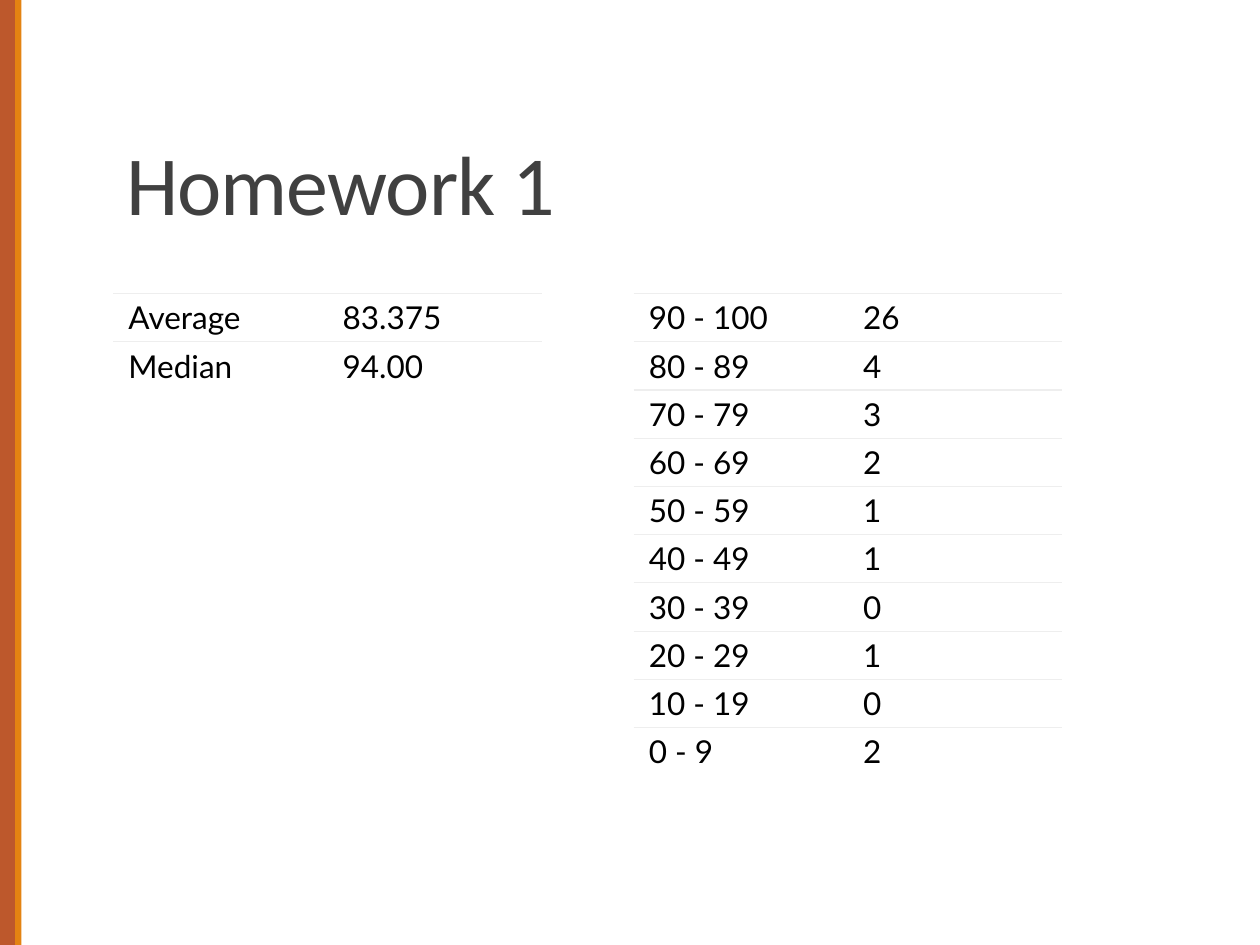
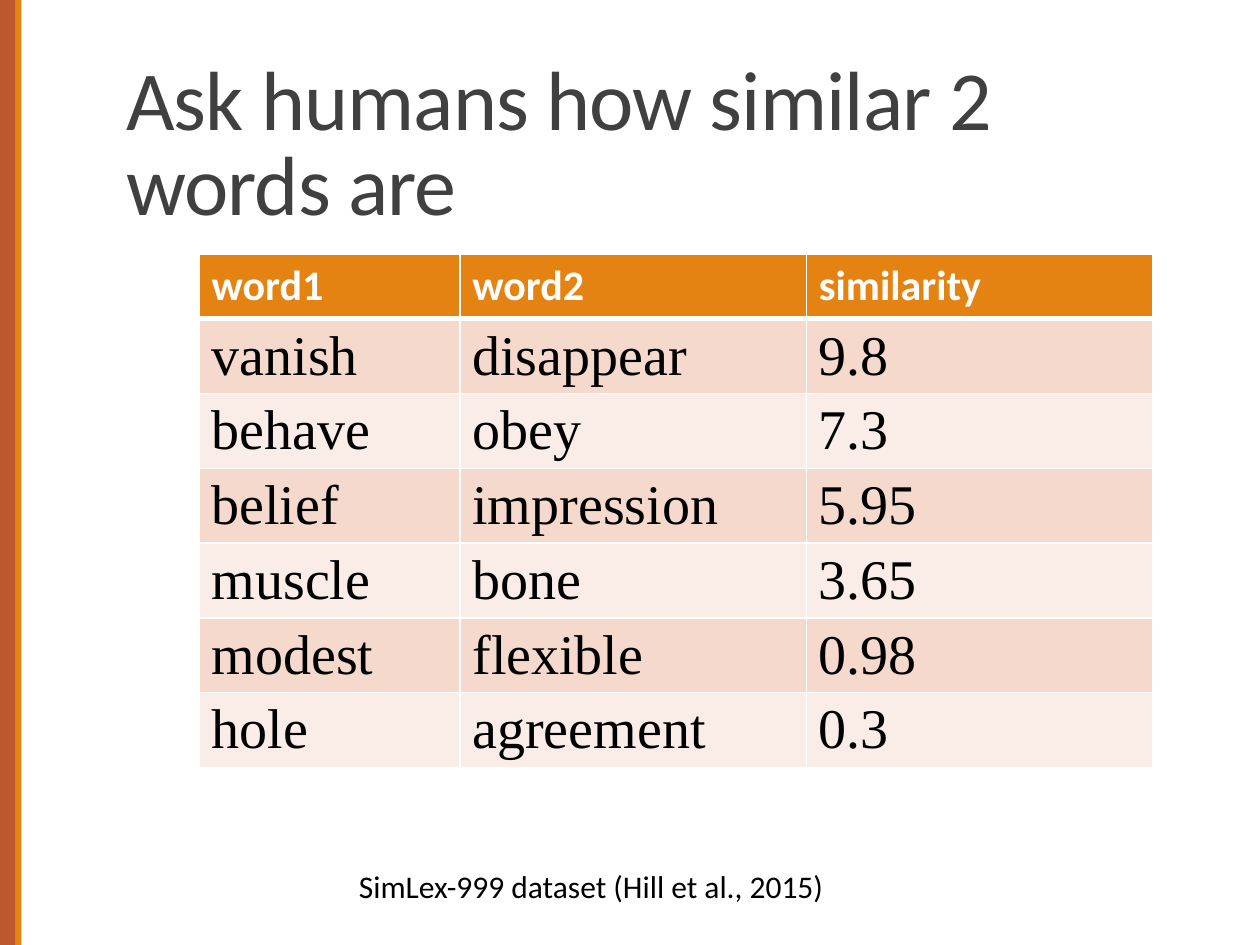
import dataclasses

import lxml.etree
import pptx
import pptx.dml.color
import pptx.enum.shapes
import pptx.enum.text
import pptx.oxml.ns
import pptx.util

GRID_COLUMNS, GRID_ROWS = 100, 75
SLIDE_WIDTH, SLIDE_HEIGHT = pptx.util.Inches(10), pptx.util.Inches(7.5)
NO_STYLE_NO_GRID = "{2D5ABB26-0587-4C30-8999-92F81FD0307C}"


@dataclasses.dataclass(frozen=True)
class Theme:
    rust: str = "BD582C"
    orange: str = "E48312"
    title: str = "404040"
    black: str = "000000"
    white: str = "FFFFFF"
    rule: str = "EEEEEE"
    dark_band: str = "F5D9CC"
    light_band: str = "FAEDE7"
    font: str = "Calibri"
    score_font: str = "Lato"
    word_font: str = "Times New Roman"
    title_size: int = 48
    word_size: int = 32
    header_size: int = 24
    small_size: int = 18


@dataclasses.dataclass(frozen=True)
class Box:
    """A rectangle in columns and rows of the slide grid."""
    left: float
    top: float
    width: float
    height: float

    def place(self):
        return x(self.left), y(self.top), x(self.width), y(self.height)


THEME = Theme()
TITLE_BOX = Box(9, 3.1, 82.5, 15.9)
BANDS = [(Box(0, 0, 1.2, GRID_ROWS), THEME.rust),
         (Box(1.2, 0, 0.5, GRID_ROWS), THEME.orange)]


def x(columns):
    return round(SLIDE_WIDTH * columns / GRID_COLUMNS)


def y(rows):
    return round(SLIDE_HEIGHT * rows / GRID_ROWS)


def color(value):
    return pptx.dml.color.RGBColor.from_string(value)


def add_run(paragraph, text, size, font, ink, bold=False):
    run = paragraph.add_run()
    run.text = text
    run.font.size = pptx.util.Pt(size)
    run.font.name = font
    run.font.bold = bold
    run.font.color.rgb = color(ink)
    return run


def add_bands(slide):
    for box, fill in BANDS:
        band = slide.shapes.add_shape(
            pptx.enum.shapes.MSO_SHAPE.RECTANGLE, *box.place())
        band.shadow.inherit = False
        band.fill.solid()
        band.fill.fore_color.rgb = color(fill)
        band.line.fill.background()


def fill_title(slide, text):
    title = slide.shapes.title
    title.left, title.top, title.width, title.height = TITLE_BOX.place()
    frame = title.text_frame
    frame.word_wrap = True
    frame.auto_size = pptx.enum.text.MSO_AUTO_SIZE.NONE
    frame.vertical_anchor = pptx.enum.text.MSO_ANCHOR.BOTTOM
    paragraph = frame.paragraphs[0]
    paragraph.alignment = pptx.enum.text.PP_ALIGN.LEFT
    paragraph.line_spacing = 0.85
    run = add_run(paragraph, text, THEME.title_size, THEME.font, THEME.title)
    run.font._element.set("spc", "-50")


def add_titled_slide(presentation, title):
    slide = presentation.slides.add_slide(presentation.slide_layouts[5])
    add_bands(slide)
    fill_title(slide, title)
    return slide


def set_border(cell, side, ink, points):
    """Draw one side (L, R, T or B, in that order) before the cell is filled."""
    qn = pptx.oxml.ns.qn
    properties = cell._tc.get_or_add_tcPr()
    line = lxml.etree.SubElement(properties, qn(f"a:ln{side}"),
                                 w=str(pptx.util.Pt(points)))
    fill = lxml.etree.SubElement(line, qn("a:solidFill"))
    lxml.etree.SubElement(fill, qn("a:srgbClr"), val=ink)


def fill_cell(cell, fill, inset):
    cell.fill.solid()
    cell.fill.fore_color.rgb = color(fill)
    cell.vertical_anchor = pptx.enum.text.MSO_ANCHOR.MIDDLE
    cell.margin_left = cell.margin_right = x(inset)
    cell.margin_top = cell.margin_bottom = y(0.4)


def add_plain_table(slide, box, row_count, column_widths):
    frame = slide.shapes.add_table(row_count, len(column_widths), *box.place())
    table = frame.table
    style = table._tbl.tblPr.find(pptx.oxml.ns.qn("a:tableStyleId"))
    style.text = NO_STYLE_NO_GRID
    table.first_row = table.horz_banding = False
    for column, width in zip(table.columns, column_widths):
        column.width = x(width)
    return table


def add_score_table(slide, left, scores):
    row_height = 3.83
    box = Box(left, 23.3, 34, row_height * len(scores))
    table = add_plain_table(slide, box, len(scores), [box.width / 2] * 2)
    for row_index, score in enumerate(scores):
        for column_index, text in enumerate(score):
            cell = table.cell(row_index, column_index)
            set_border(cell, "T", THEME.rule, 0.75)
            fill_cell(cell, THEME.white, 1.2)
            add_run(cell.text_frame.paragraphs[0], text,
                    THEME.small_size, THEME.score_font, THEME.black)


def add_word_table(slide, box, column_widths, word_rows):
    header_height = 5.1
    body_height = (box.height - header_height) / (len(word_rows) - 1)
    table = add_plain_table(slide, box, len(word_rows), column_widths)
    for row_index, words in enumerate(word_rows):
        is_header = row_index == 0
        table.rows[row_index].height = y(header_height if is_header else body_height)
        if is_header:
            fill = THEME.orange
            text_style = (THEME.header_size, THEME.font, THEME.white, True)
        else:
            fill = THEME.dark_band if row_index % 2 else THEME.light_band
            text_style = (THEME.word_size, THEME.word_font, THEME.black)
        for column_index, text in enumerate(words):
            cell = table.cell(row_index, column_index)
            for side in "LRTB":
                heavy = (is_header and side == "B") or (row_index == 1 and side == "T")
                set_border(cell, side, THEME.white, 3 if heavy else 1)
            fill_cell(cell, fill, 1)
            add_run(cell.text_frame.paragraphs[0], text, *text_style)


def add_citation(slide, box, text):
    frame = slide.shapes.add_textbox(*box.place()).text_frame
    frame.word_wrap = True
    add_run(frame.paragraphs[0], text, THEME.small_size, THEME.font, THEME.black)


def build_homework_slide(presentation):
    slide = add_titled_slide(presentation, "Homework 1")
    add_score_table(slide, 9, [("Average", "83.375"), ("Median", "94.00")])
    counts = [26, 4, 3, 2, 1, 1, 0, 1, 0, 2]
    lows = range(90, -1, -10)
    ranges = [f"{low} - {100 if low == 90 else low + 9}" for low in lows]
    add_score_table(slide, 50.3, list(zip(ranges, map(str, counts))))


def build_similarity_slide(presentation):
    slide = add_titled_slide(presentation, "Ask humans how similar 2 words are")
    add_word_table(slide, Box(15.8, 20.2, 75.7, 40.7), [20.7, 27.5, 27.5], [
        ("word1", "word2", "similarity"),
        ("vanish", "disappear", "9.8"),
        ("behave", "obey", "7.3"),
        ("belief", "impression", "5.95"),
        ("muscle", "bone", "3.65"),
        ("modest", "flexible", "0.98"),
        ("hole", "agreement", "0.3"),
    ])
    add_citation(slide, Box(27.5, 68.3, 39.9, 4),
                 "SimLex-999 dataset (Hill et al., 2015)")


def main():
    presentation = pptx.Presentation()
    presentation.slide_width, presentation.slide_height = SLIDE_WIDTH, SLIDE_HEIGHT
    build_homework_slide(presentation)
    build_similarity_slide(presentation)
    presentation.save("out.pptx")


if __name__ == "__main__":
    main()
